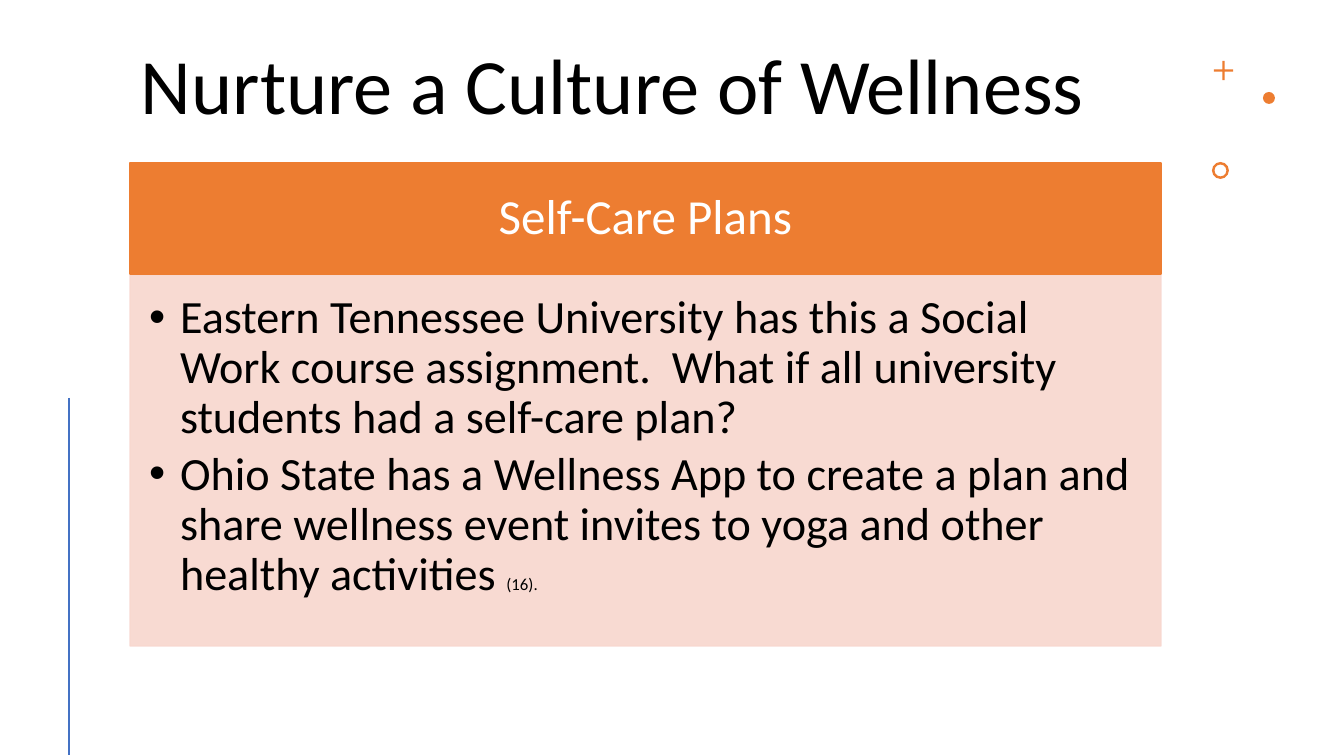
from dataclasses import dataclass

from lxml import etree
from pptx import Presentation
from pptx.dml.color import RGBColor
from pptx.enum.shapes import MSO_CONNECTOR, MSO_SHAPE
from pptx.enum.text import MSO_ANCHOR, MSO_AUTO_SIZE, PP_ALIGN
from pptx.oxml.ns import qn
from pptx.util import Emu, Pt

RECTANGLE, CROSS = MSO_SHAPE.RECTANGLE, MSO_SHAPE.CROSS
OVAL, DONUT = MSO_SHAPE.OVAL, MSO_SHAPE.DONUT
STRAIGHT = MSO_CONNECTOR.STRAIGHT
TOP, MIDDLE = MSO_ANCHOR.TOP, MSO_ANCHOR.MIDDLE
LEFT, CENTER = PP_ALIGN.LEFT, PP_ALIGN.CENTER
NO_AUTOFIT = MSO_AUTO_SIZE.NONE
EMU_PER_PX = 914400 / 100.8


@dataclass(frozen=True)
class Theme:
    font: str = "Calibri"
    accent: str = "ED7D31"
    panel: str = "F8D7CE"
    rule: str = "4472C4"
    dark: str = "000000"
    light: str = "FFFFFF"
    panel_opacity: int = 90
    title_size: int = 56
    header_size: int = 35
    body_size: int = 33
    reference_size: int = 12


THEME = Theme()


def px(length):
    return Emu(round(length * EMU_PER_PX))


def rgb(color):
    return RGBColor.from_string(color)


def place(shape, left, top, width, height):
    shape.left, shape.top = px(left), px(top)
    shape.width, shape.height = px(width), px(height)


def paint(shape, color, outlined=False):
    shape.fill.solid()
    shape.fill.fore_color.rgb = rgb(color)
    if outlined:
        shape.line.color.rgb = rgb(color)
        shape.line.width = Pt(1)
    else:
        shape.line.fill.background()


def set_opacity(shape, percent):
    for color in shape._element.spPr.iter(qn("a:srgbClr")):
        etree.SubElement(color, qn("a:alpha"), val=str(percent * 1000))


def set_frame(shape, anchor, left, top, right, bottom):
    frame = shape.text_frame
    frame.word_wrap = True
    frame.auto_size = NO_AUTOFIT
    frame.vertical_anchor = anchor
    frame.margin_left, frame.margin_top = px(left), px(top)
    frame.margin_right, frame.margin_bottom = px(right), px(bottom)
    return frame


def format_paragraph(paragraph, size, color, alignment, space_after=0):
    paragraph.alignment = alignment
    paragraph.line_spacing = 0.9
    paragraph.space_before = Pt(0)
    paragraph.space_after = Pt(space_after)
    for run in paragraph.runs:
        run.font.name = THEME.font
        run.font.size = Pt(size)
        run.font.color.rgb = rgb(color)


def set_bullet(paragraph, indent):
    paragraph.level = 1
    properties = paragraph._p.get_or_add_pPr()
    properties.set("marL", str(px(indent)))
    properties.set("indent", str(-px(indent)))
    etree.SubElement(properties, qn("a:buFont"), typeface="Arial")
    etree.SubElement(properties, qn("a:buChar"), char="•")


def add_title(slide, text):
    title = slide.shapes.title
    place(title, 131, 42, 1031, 132)
    frame = set_frame(title, TOP, 10, 5, 10, 5)
    frame.text = text
    format_paragraph(frame.paragraphs[0], THEME.title_size, THEME.dark, LEFT)


def add_ornament(slide, kind, left, top, size, adjustment=None):
    shape = slide.shapes.add_shape(kind, px(left), px(top), px(size), px(size))
    shape.shadow.inherit = False
    paint(shape, THEME.accent)
    if adjustment is not None:
        shape.adjustments[0] = adjustment


def add_rule(slide, x, top, bottom):
    rule = slide.shapes.add_connector(STRAIGHT, px(x), px(top), px(x), px(bottom))
    rule.line.color.rgb = rgb(THEME.rule)
    rule.line.width = Pt(2)
    etree.SubElement(rule._element.spPr, qn("a:effectLst"))


def add_header(slide, text):
    header = slide.shapes.add_shape(RECTANGLE, px(130), px(163), px(1031), px(111))
    header.shadow.inherit = False
    paint(header, THEME.accent, outlined=True)
    frame = set_frame(header, MIDDLE, 27, 16, 27, 16)
    frame.text = text
    format_paragraph(frame.paragraphs[0], THEME.header_size, THEME.light, CENTER)


def add_body(slide, items, reference):
    body = slide.placeholders[1]
    place(body, 130, 275, 1031, 371)
    paint(body, THEME.panel, outlined=True)
    set_opacity(body, THEME.panel_opacity)
    frame = set_frame(body, TOP, 19, 19, 26, 29)
    frame.text = "\n".join(items)
    frame.paragraphs[-1].add_run().text = reference
    for paragraph in frame.paragraphs:
        set_bullet(paragraph, 31)
        format_paragraph(paragraph, THEME.body_size, THEME.dark, LEFT, space_after=5)
    frame.paragraphs[-1].runs[-1].font.size = Pt(THEME.reference_size)


def main():
    presentation = Presentation()
    presentation.slide_width, presentation.slide_height = px(1344), px(756)
    slide = presentation.slides.add_slide(presentation.slide_layouts[1])

    add_title(slide, "Nurture a Culture of Wellness")

    # Corner ornaments and side rule
    add_ornament(slide, CROSS, 1214, 61, 19, 0.44)
    add_ornament(slide, OVAL, 1263, 92, 12)
    add_ornament(slide, DONUT, 1212, 162, 17, 0.15)
    add_rule(slide, 69, 398, 755)

    # Self-care panel
    add_header(slide, "Self-Care Plans")
    add_body(slide, [
        "Eastern Tennessee University has this a Social Work course assignment.  "
        "What if all university students had a self-care plan?",
        "Ohio State has a Wellness App to create a plan and share wellness event "
        "invites to yoga and other healthy activities ",
    ], "(16).")

    presentation.save("out.pptx")


if __name__ == "__main__":
    main()
